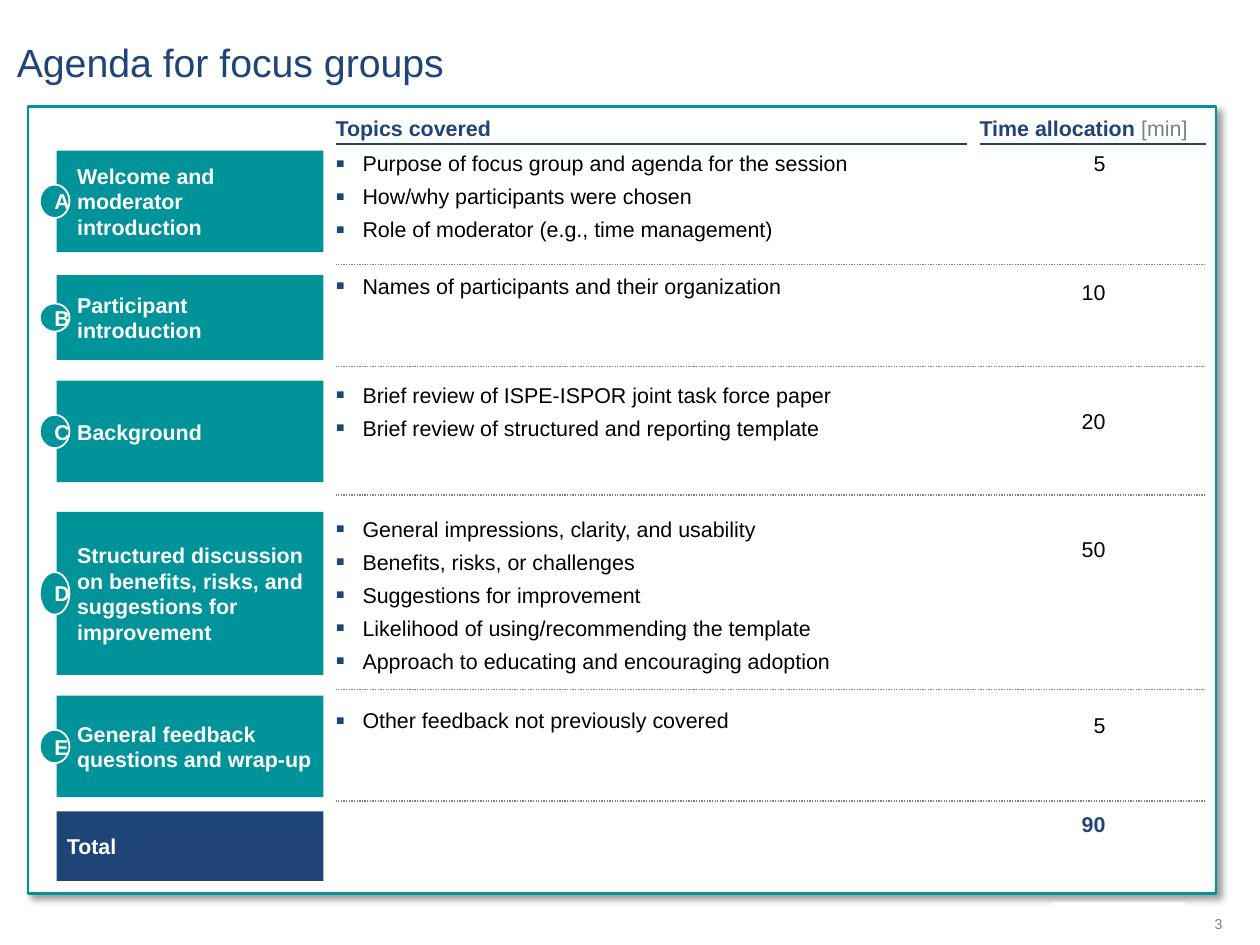
from dataclasses import dataclass
from lxml.etree import SubElement
from pptx import Presentation
from pptx.dml.color import RGBColor
from pptx.enum.dml import MSO_LINE
from pptx.enum.shapes import MSO_CONNECTOR, MSO_SHAPE
from pptx.enum.text import MSO_ANCHOR, MSO_AUTO_SIZE, PP_ALIGN
from pptx.oxml.ns import qn
from pptx.util import Pt

NAVY = RGBColor(0x1F, 0x44, 0x78)
TEAL = RGBColor(0x00, 0x93, 0x9A)
GRAY = RGBColor(0x80, 0x80, 0x80)
BLACK = RGBColor(0x00, 0x00, 0x00)
WHITE = RGBColor(0xFF, 0xFF, 0xFF)


@dataclass
class Box:
    left: float
    top: float
    width: float
    height: float

    def inside(self, left, top, width, height):
        return Box(self.left + left, self.top + top, width, height)

    def lengths(self):
        return [Pt(round(n, 2)) for n in (self.left, self.top, self.width, self.height)]


@dataclass
class Session:
    letter: str
    label: str
    minutes: str
    topics: list
    # Offsets from the top of the panel, then heights
    label_top: float
    topics_top: float
    minutes_top: float
    rule_top: float
    label_height: float = 56.9
    badge_height: float = 18.7


SESSIONS = [
    Session("A", "Welcome and moderator introduction", "5",
            ["Purpose of focus group and agenda for the session",
             "How/why participants were chosen",
             "Role of moderator (e.g., time management)"],
            24.5, 24.5, 24.5, 88.5),
    Session("B", "Participant introduction", "10",
            ["Names of participants and their organization"],
            94.3, 92.9, 96.5, 145.4, 47.5, 15.8),
    Session("C", "Background", "20",
            ["Brief review of ISPE-ISPOR joint task force paper",
             "Brief review of structured and reporting template"],
            153.4, 154.1, 168.5, 217.4),
    Session("D", "Structured discussion on benefits, risks, and "
            "suggestions for improvement", "50",
            ["General impressions, clarity, and usability",
             "Benefits, risks, or challenges",
             "Suggestions for improvement",
             "Likelihood of using/recommending the template",
             "Approach to educating and encouraging adoption"],
            226.8, 229, 240.5, 326.2, 91.4, 23.8),
    Session("E", "General feedback questions and wrap-up", "5",
            ["Other feedback not previously covered"],
            329.8, 336.2, 339.1, 388.8),
]

LABEL_LEFT, LABEL_WIDTH = 15.9, 149.5
BADGE_LEFT, BADGE_WIDTH = 6.5, 16.6
TOPICS_LEFT, TOPICS_WIDTH = 172.1, 353.5
TIME_LEFT, TIME_WIDTH = 532.8, 126.7
MINUTES_LEFT, MINUTES_WIDTH = 588.2, 15.1
TOTAL_TOP, TOTAL_HEIGHT = 394.6, 38.9


def add_span(para, text, color, size=12, bold=False):
    span = para.add_run()
    span.text = text
    span.font.name = "Arial"
    span.font.size = Pt(size)
    span.font.bold = bold
    span.font.color.rgb = color


def set_frame(shape, anchor=MSO_ANCHOR.TOP, margins=(0, 0, 0, 0)):
    frame = shape.text_frame
    frame.auto_size = MSO_AUTO_SIZE.NONE
    frame.word_wrap = True
    frame.vertical_anchor = anchor
    (frame.margin_left, frame.margin_top,
     frame.margin_right, frame.margin_bottom) = [Pt(n) for n in margins]
    return frame


def place(shape, box):
    shape.left, shape.top, shape.width, shape.height = box.lengths()


def add_text(page, box, spans, align=PP_ALIGN.LEFT, anchor=MSO_ANCHOR.TOP, size=12):
    frame = set_frame(page.shapes.add_textbox(*box.lengths()), anchor)
    para = frame.paragraphs[0]
    para.alignment = align
    for text, color, bold in spans:
        add_span(para, text, color, size, bold)


def add_block(page, box, color, kind=MSO_SHAPE.RECTANGLE, outline=None, weight=1):
    block = page.shapes.add_shape(kind, *box.lengths())
    block.shadow.inherit = False
    block.fill.solid()
    block.fill.fore_color.rgb = color
    if outline is None:
        block.line.fill.background()
    else:
        block.line.color.rgb = outline
        block.line.width = Pt(weight)
    return block


def label_block(block, text, indent=5.76, align=PP_ALIGN.LEFT):
    frame = set_frame(block, MSO_ANCHOR.MIDDLE, (indent, 5.76, 5.76, 5.76))
    frame.paragraphs[0].alignment = align
    add_span(frame.paragraphs[0], text, WHITE, bold=True)


def add_rule(page, box, color, dash=None):
    left, top, width, _ = box.lengths()
    rule = page.shapes.add_connector(MSO_CONNECTOR.STRAIGHT, left, top, left + width, top)
    rule.line.color.rgb = color
    rule.line.width = Pt(0.75)
    if dash:
        rule.line.dash_style = dash
    SubElement(rule._element.spPr, qn("a:effectLst"))


def add_bullet(para):
    props = para._p.get_or_add_pPr()
    props.set("marL", str(Pt(15.12)))
    props.set("indent", str(Pt(-15.12)))
    color = SubElement(props, qn("a:buClr"))
    SubElement(color, qn("a:srgbClr"), val=str(NAVY))
    SubElement(props, qn("a:buSzPct"), val="125000")
    SubElement(props, qn("a:buFont"), typeface="Arial")
    SubElement(props, qn("a:buChar"), char="▪")


def add_panel(page, box):
    panel = add_block(page, box, WHITE, outline=TEAL, weight=1.5)
    effects = panel._element.spPr.find(qn("a:effectLst"))
    shadow = SubElement(effects, qn("a:outerShdw"), blurRad=str(Pt(4)), dist=str(Pt(3)),
                        dir="2700000", algn="tl", rotWithShape="0")
    color = SubElement(shadow, qn("a:srgbClr"), val=str(BLACK))
    SubElement(color, qn("a:alpha"), val="40000")
    # Send the panel behind the placeholders
    page.shapes._spTree.insert(2, panel._element)


def add_header(page, box, spans):
    add_text(page, box, spans, anchor=MSO_ANCHOR.BOTTOM)
    add_rule(page, box.inside(0, 16.6, box.width, 0), NAVY)


def add_topics(page, box, topics, body):
    body = body or page.shapes.add_textbox(*box.lengths())
    place(body, box)
    frame = set_frame(body)
    for number, topic in enumerate(topics):
        para = frame.add_paragraph() if number else frame.paragraphs[0]
        add_bullet(para)
        para.line_spacing = 1.0
        para.space_before = Pt(4.1 if number else 0)
        add_span(para, topic, BLACK)


def add_minutes(page, panel, top, text, color, bold=False):
    add_text(page, panel.inside(MINUTES_LEFT, top, MINUTES_WIDTH, 14.4),
             [(text, color, bold)], PP_ALIGN.RIGHT)


def add_session(page, panel, session, body):
    # Label with its letter badge, centred on the label's height
    label = panel.inside(LABEL_LEFT, session.label_top, LABEL_WIDTH, session.label_height)
    label_block(add_block(page, label, TEAL), session.label, indent=11.5)
    badge_top = session.label_top + (session.label_height - session.badge_height) / 2
    badge = panel.inside(BADGE_LEFT, badge_top, BADGE_WIDTH, session.badge_height)
    label_block(add_block(page, badge, TEAL, MSO_SHAPE.OVAL, WHITE),
                session.letter, align=PP_ALIGN.CENTER)
    # Topics, minutes and the dotted rule below
    height = 14.4 + 18.9 * (len(session.topics) - 1)
    add_topics(page, panel.inside(TOPICS_LEFT, session.topics_top, TOPICS_WIDTH, height),
               session.topics, body)
    add_minutes(page, panel, session.minutes_top, session.minutes, BLACK)
    rule_width = TIME_LEFT + TIME_WIDTH - TOPICS_LEFT
    add_rule(page, panel.inside(TOPICS_LEFT, session.rule_top, rule_width, 0),
             GRAY, MSO_LINE.ROUND_DOT)


def add_agenda(page, panel, bodies):
    add_panel(page, panel)
    # Column headers
    add_header(page, panel.inside(TOPICS_LEFT, 4.3, TOPICS_WIDTH, 15),
               [("Topics covered", NAVY, True)])
    add_header(page, panel.inside(TIME_LEFT, 4.3, TIME_WIDTH, 15),
               [("Time allocation ", NAVY, True), ("[min]", GRAY, False)])
    # Sessions; those beyond the layout's bodies get text boxes
    for number, session in enumerate(SESSIONS):
        add_session(page, panel, session, bodies[number] if number < len(bodies) else None)
    # Total row
    total = panel.inside(LABEL_LEFT, TOTAL_TOP, LABEL_WIDTH, TOTAL_HEIGHT)
    label_block(add_block(page, total, NAVY), "Total")
    add_minutes(page, panel, TOTAL_TOP, "90", NAVY, True)


def add_title(page, box):
    title = page.shapes.title
    place(title, box)
    para = set_frame(title).paragraphs[0]
    para.alignment = PP_ALIGN.LEFT
    add_span(para, "Agenda for focus groups", NAVY, 22)


def add_footer(page, box):
    add_block(page, box.inside(0, 0, 74.2, box.height), WHITE)
    add_text(page, box.inside(85, 7.2, 10, 9.4), [("3", GRAY, False)],
             PP_ALIGN.RIGHT, MSO_ANCHOR.MIDDLE, 8)


def main():
    deck = Presentation()
    deck.slide_width, deck.slide_height = Pt(705.6), Pt(529.2)
    page = deck.slides.add_slide(deck.slide_layouts[4])
    bodies = list(page.placeholders)[1:]
    add_title(page, Box(9.4, 21.6, 679, 26.6))
    add_agenda(page, Box(15.8, 59.8, 665.3, 440.6), bodies)
    add_footer(page, Box(589.7, 505.4, 95, 23.8))
    deck.save("out.pptx")


if __name__ == "__main__":
    main()
